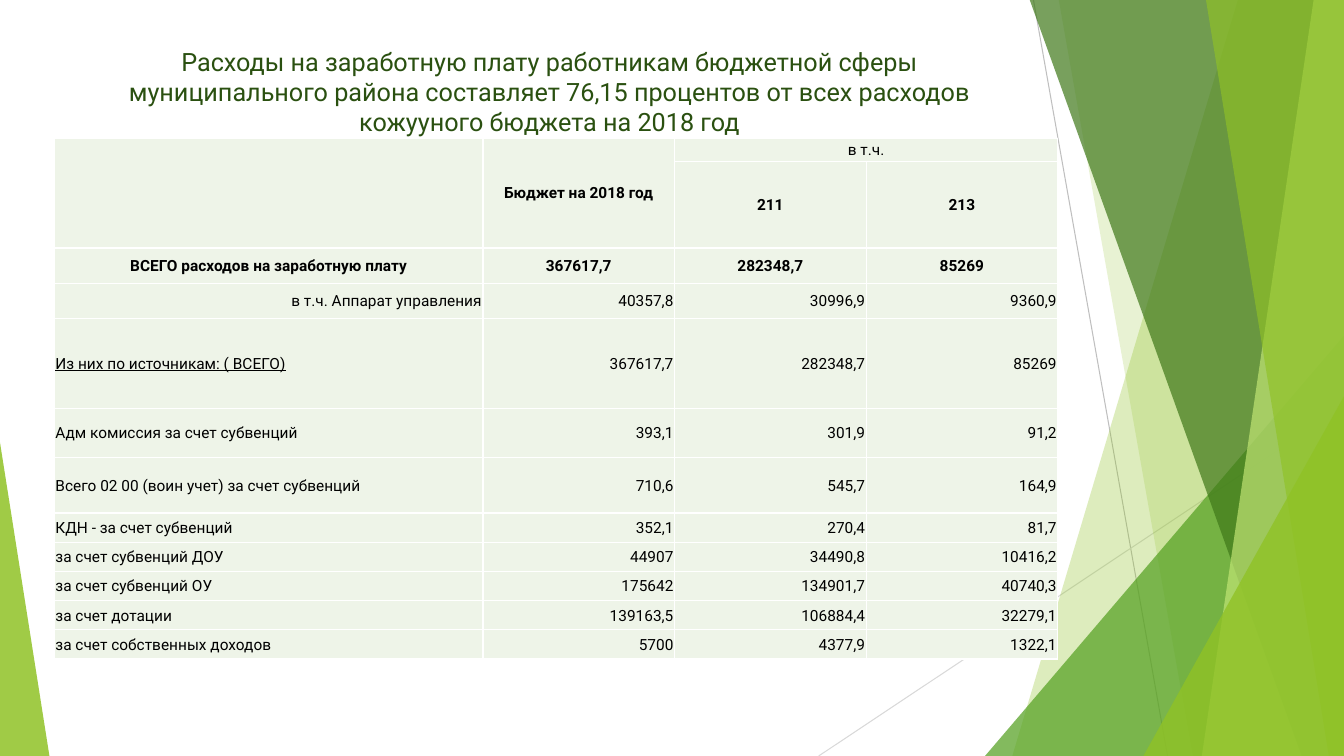
from lxml import etree
from pptx import Presentation
from pptx.dml.color import RGBColor
from pptx.enum import shapes as kinds, text
from pptx.oxml.ns import qn
from pptx.util import Inches, Pt

FONT = "Roboto"
LIME = RGBColor(0x90, 0xC2, 0x26)
GREEN = RGBColor(0x54, 0xA0, 0x21)
DARK = RGBColor(0x3F, 0x78, 0x19)
PALE = RGBColor(0xC0, 0xE4, 0x74)
TITLE = RGBColor(0x2A, 0x50, 0x10)
CELL = RGBColor(0xEE, 0xF4, 0xE8)
BLACK = RGBColor(0, 0, 0)
GREY = RGBColor(0xBF, 0xBF, 0xBF)
LIGHT = RGBColor(0xD9, 0xD9, 0xD9)
WHITE = RGBColor(0xFF, 0xFF, 0xFF)

LEFT, MID, RIGHT = (text.PP_ALIGN.LEFT, text.PP_ALIGN.CENTER,
                    text.PP_ALIGN.RIGHT)
COLS = [4.25, 1.9, 1.9, 1.9]
ROWS = [0.23, 0.86, 0.35, 0.35, 0.89, 0.49, 0.55] + [0.29] * 5
DATA = [
    ("", "Бюджет на 2018 год", "в т.ч.", ""),
    ("", "", "211", "213"),
    ("ВСЕГО расходов на заработную плату", "367617,7", "282348,7", "85269"),
    ("в т.ч. Аппарат управления", "40357,8", "30996,9", "9360,9"),
    ("Из них по источникам: ( ВСЕГО)", "367617,7", "282348,7", "85269"),
    ("Адм комиссия за счет субвенций", "393,1", "301,9", "91,2"),
    ("Всего 02 00 (воин учет) за счет субвенций", "710,6", "545,7", "164,9"),
    ("КДН - за счет субвенций", "352,1", "270,4", "81,7"),
    ("за счет субвенций ДОУ", "44907", "34490,8", "10416,2"),
    ("за счет субвенций ОУ", "175642", "134901,7", "40740,3"),
    ("за счет дотации", "139163,5", "106884,4", "32279,1"),
    ("за счет собственных доходов", "5700", "4377,9", "1322,1"),
]
HEAD, MANAGE, SOURCE = 3, 3, 4  # header row count, then two row numbers


def add_line(slide, start, end, color):
    line = slide.shapes.add_connector(
        kinds.MSO_CONNECTOR.STRAIGHT, *map(Inches, start + end))
    line.line.color.rgb = color
    line.line.width = Pt(0.75)
    etree.SubElement(line._element.spPr, qn("a:effectLst"))


def paint(shape, color, alpha):
    """Fill without outline or shadow; alpha is opacity in percent."""
    shape.shadow.inherit = False
    shape.line.fill.background()
    shape.fill.solid()
    shape.fill.fore_color.rgb = color
    tint = shape._element.spPr.find(qn("a:solidFill"))[0]
    etree.SubElement(tint, qn("a:alpha"), val=str(alpha * 1000))


def add_band(slide, top, foot, color, alpha):
    """Full-height band from a slanted left edge to the slide's right edge."""
    points = [(top, -0.01), (13.33, -0.01), (13.33, 7.5), (foot, 7.5)]
    points = [(Inches(x), Inches(y)) for x, y in points]
    form = slide.shapes.build_freeform(*points[0])
    form.add_line_segments(points[1:], close=True)
    paint(form.convert_to_shape(), color, alpha)


def add_peak(slide, box, tip, color, alpha):
    """Triangle whose apex sits at the fraction tip of its width."""
    peak = slide.shapes.add_shape(
        kinds.MSO_SHAPE.ISOSCELES_TRIANGLE, *map(Inches, box))
    peak.adjustments[0] = tip
    paint(peak, color, alpha)


def add_decor(slide):
    add_line(slide, (10.25, 0), (11.58, 7.5), GREY)
    add_line(slide, (13.33, 4.03), (8.12, 7.5), LIGHT)
    add_band(slide, 12.28, 10.04, LIME, 30)
    add_band(slide, 10.5, 11.83, LIME, 20)
    add_peak(slide, (9.77, 3.33, 3.56, 4.17), 1, GREEN, 72)
    add_band(slide, 10.21, 12.91, DARK, 70)
    add_band(slide, 13.03, 11.92, PALE, 70)
    add_band(slide, 11.96, 13.18, LIME, 65)
    add_peak(slide, (11.34, 3.93, 1.99, 3.57), 1, LIME, 80)
    add_peak(slide, (0, 4.39, 0.49, 3.11), 0, LIME, 85)


def set_font(para, size, color):
    para.font.name = FONT
    para.font.size = Pt(size)
    para.font.color.rgb = color


def add_title(slide, words):
    box = slide.shapes.add_textbox(
        *map(Inches, (0.75, 0.41, 9.4, 0.96)))
    frame = box.text_frame
    frame.word_wrap = True
    frame.text = words
    para = frame.paragraphs[0]
    para.alignment = MID
    set_font(para, 18, TITLE)


def add_edges(cell):
    props = cell._tc.get_or_add_tcPr()
    for side in ("lnL", "lnR", "lnT", "lnB"):
        edge = etree.SubElement(props, qn("a:" + side), w=str(Pt(1)))
        fill = etree.SubElement(edge, qn("a:solidFill"))
        etree.SubElement(fill, qn("a:srgbClr"), val=str(WHITE))


def fill_cell(cell, words, align):
    add_edges(cell)
    cell.fill.solid()
    cell.fill.fore_color.rgb = CELL
    cell.vertical_anchor = text.MSO_ANCHOR.MIDDLE
    cell.margin_left = cell.margin_right = cell.margin_top = Inches(0.01)
    cell.margin_bottom = 0
    cell.text = words
    para = cell.text_frame.paragraphs[0]
    para.alignment = align
    set_font(para, 11, BLACK)
    return para


def add_grid(slide):
    frame = slide.shapes.add_table(
        len(ROWS), len(COLS), Inches(0.54), Inches(1.37),
        Inches(sum(COLS)), Inches(sum(ROWS)))
    table = frame.table
    table.first_row = table.horz_banding = False
    for col, width in zip(table.columns, COLS):
        col.width = Inches(width)
    for row, height in zip(table.rows, ROWS):
        row.height = Inches(height)
    for i, row in enumerate(DATA):
        for j, words in enumerate(row):
            if i < HEAD:
                align = MID
            else:
                align = RIGHT if j or i == MANAGE else LEFT
            para = fill_cell(table.cell(i, j), words, align)
            para.font.bold = i < HEAD and (i, j) != (0, 2)
            para.font.underline = (i, j) == (SOURCE, 0)
    for j in (0, 1):
        table.cell(0, j).merge(table.cell(1, j))
    table.cell(0, 2).merge(table.cell(0, 3))


def main():
    deck = Presentation()
    deck.slide_width, deck.slide_height = Inches(13.33), Inches(7.5)
    slide = deck.slides.add_slide(deck.slide_layouts[6])
    add_decor(slide)
    add_title(slide, "Расходы на заработную плату работникам бюджетной сферы "
              "муниципального района составляет 76,15 процентов от всех "
              "расходов кожууного бюджета на 2018 год")
    add_grid(slide)
    deck.save("out.pptx")


if __name__ == "__main__":
    main()
